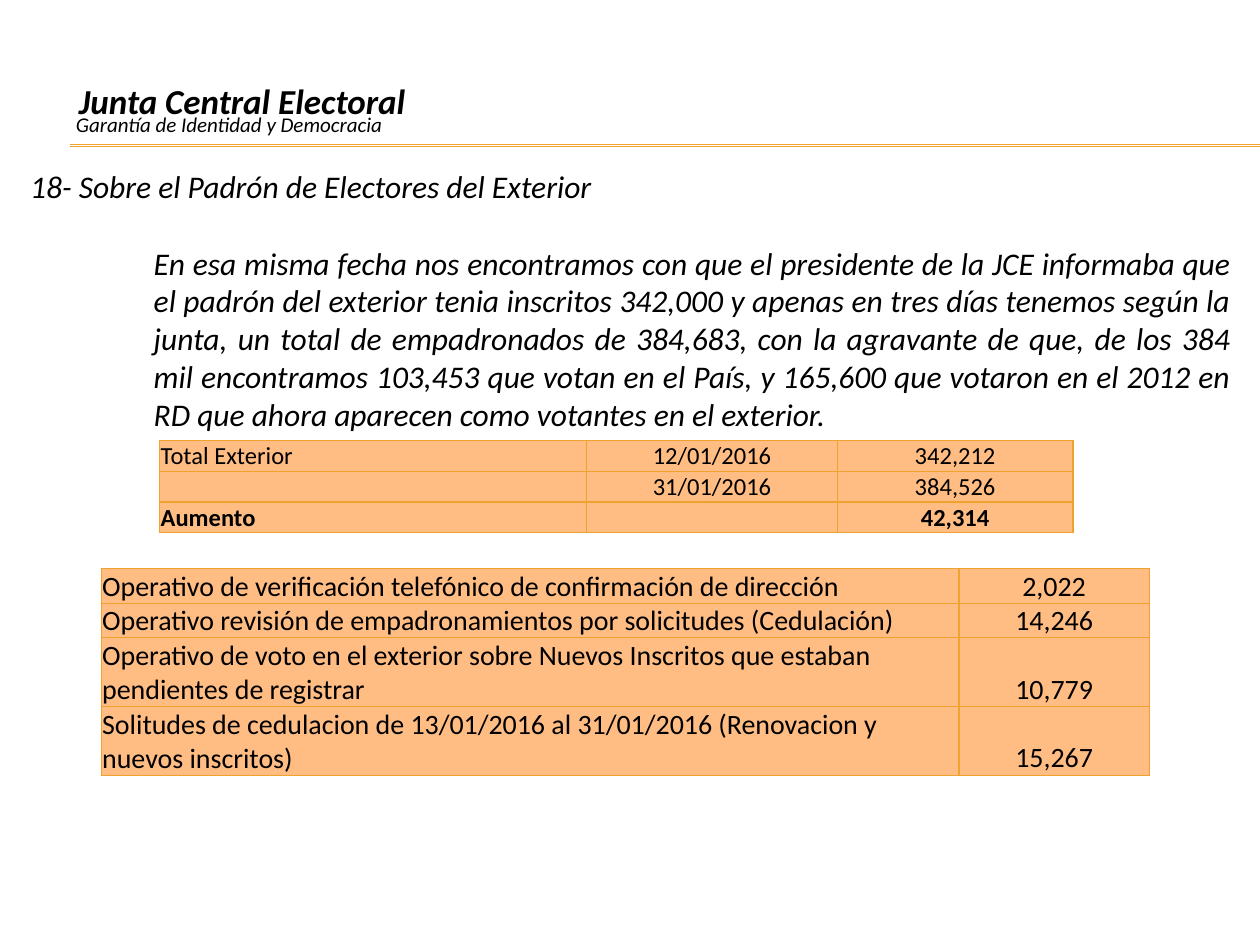
from lxml.etree import SubElement
from pptx import Presentation
from pptx.dml.color import RGBColor
from pptx.enum.shapes import MSO_CONNECTOR
from pptx.enum.text import MSO_ANCHOR, PP_ALIGN
from pptx.oxml.ns import qn
from pptx.util import Cm, Pt

COLORS = {"text": "000000", "gold": "F0A22E", "cell": "FFBD84"}
FONT = "Calibri"


def rgb(name):
    return RGBColor.from_string(COLORS[name])


def style(paragraph, size, bold=False, italic=False, align=PP_ALIGN.LEFT):
    paragraph.alignment = align
    font = paragraph.font
    font.name, font.size = FONT, Pt(size)
    font.bold, font.italic = bold, italic
    font.color.rgb = rgb("text")


def add_text_frame(slide, left, top, width, height, wrap):
    box = slide.shapes.add_textbox(Cm(left), Cm(top), Cm(width), Cm(height))
    box.text_frame.word_wrap = wrap
    return box.text_frame


def add_header(slide, left, top, width):
    # Institution name and motto
    name = add_text_frame(slide, left + 0.1, top, 7.14, 1.12, False).paragraphs[0]
    name.text = "Junta Central Electoral"
    style(name, 20, bold=True, italic=True)
    motto = add_text_frame(slide, left, top + 0.66, 6.76, 0.76, False).paragraphs[0]
    motto.text = "Garantía de Identidad y Democracia"
    style(motto, 12, italic=True, align=PP_ALIGN.CENTER)

    # Double rule running to the right edge
    for offset in (1.45, 1.48):
        y = Cm(top + offset)
        rule = slide.shapes.add_connector(
            MSO_CONNECTOR.STRAIGHT, Cm(left + 0.18), y, Cm(left + width), y)
        rule.line.color.rgb = rgb("gold")
        rule.line.width = Pt(0.75)
        SubElement(rule._element.spPr, qn("a:effectLst"))


def add_body(slide, left, top, width, height):
    frame = add_text_frame(slide, left, top, width, height, True)
    heading = frame.paragraphs[0]
    heading.text = "18- Sobre el Padrón de Electores del Exterior"
    detail = frame.add_paragraph()
    detail.text = (
        "En esa misma fecha nos encontramos con que el presidente de la JCE "
        "informaba que el padrón del exterior tenia inscritos 342,000 y apenas "
        "en tres días tenemos según la junta, un total de empadronados de "
        "384,683, con la agravante de que, de los 384 mil encontramos 103,453 "
        "que votan en el País, y 165,600 que votaron en el 2012 en RD que ahora "
        "aparecen como votantes en el exterior.")
    detail.space_before = Pt(22)
    detail._p.get_or_add_pPr().set("marL", str(Cm(2.49)))
    for paragraph in (heading, detail):
        style(paragraph, 18, italic=True, align=PP_ALIGN.JUSTIFY)


def add_borders(cell):
    properties = cell._tc.get_or_add_tcPr()
    for side in ("lnL", "lnR", "lnT", "lnB"):
        line = SubElement(properties, qn(f"a:{side}"), w=str(Pt(0.79)))
        fill = SubElement(line, qn("a:solidFill"))
        SubElement(fill, qn("a:srgbClr"), val=COLORS["gold"])


def add_figures(slide, left, top, widths, heights, rows, size, bold_row=None):
    """Table with a label column followed by centred value columns."""
    table = slide.shapes.add_table(
        len(rows), len(widths), Cm(left), Cm(top),
        Cm(sum(widths)), Cm(sum(heights))).table
    table.first_row = table.horz_banding = False
    for column, width in zip(table.columns, widths):
        column.width = Cm(width)
    for r, (row, height) in enumerate(zip(rows, heights)):
        table.rows[r].height = Cm(height)
        for c, value in enumerate(row):
            cell = table.cell(r, c)
            cell.margin_left = cell.margin_right = cell.margin_top = Cm(0.02)
            cell.margin_bottom = 0
            cell.vertical_anchor = MSO_ANCHOR.BOTTOM
            add_borders(cell)
            cell.fill.solid()
            cell.fill.fore_color.rgb = rgb("cell")
            paragraph = cell.text_frame.paragraphs[0]
            style(paragraph, size, bold=r == bold_row,
                  align=PP_ALIGN.CENTER if c else PP_ALIGN.LEFT)
            if value:
                paragraph.text = value
            else:  # keeps an empty cell from stretching its row
                SubElement(paragraph._p, qn("a:endParaRPr"), sz=str(size * 100))


def main():
    deck = Presentation()
    deck.slide_width, deck.slide_height = Cm(25.4), Cm(19.05)
    slide = deck.slides.add_slide(deck.slide_layouts[6])

    add_header(slide, 1.24, 1.47, 24.16)
    add_body(slide, 0.36, 3.25, 24.71, 5.64)

    # Growth of the register abroad
    add_figures(slide, 3.22, 8.88, (8.61, 5.05, 4.75), (0.62,) * 3, [
        ("Total Exterior", "12/01/2016", "342,212"),
        ("", "31/01/2016", "384,526"),
        ("Aumento", "", "42,314"),
    ], 14, bold_row=2)

    # Where the increase comes from
    add_figures(slide, 2.04, 11.46, (17.29, 3.84), (0.7, 0.7, 1.39, 1.38), [
        ("Operativo de verificación telefónico de confirmación de dirección",
         "2,022"),
        ("Operativo revisión de empadronamientos por solicitudes (Cedulación)",
         "14,246"),
        ("Operativo de voto en el exterior sobre Nuevos Inscritos que estaban "
         "pendientes de registrar", "10,779"),
        ("Solitudes de cedulacion de 13/01/2016 al 31/01/2016 (Renovacion y "
         "nuevos inscritos)", "15,267"),
    ], 16)

    deck.save("out.pptx")


if __name__ == "__main__":
    main()
